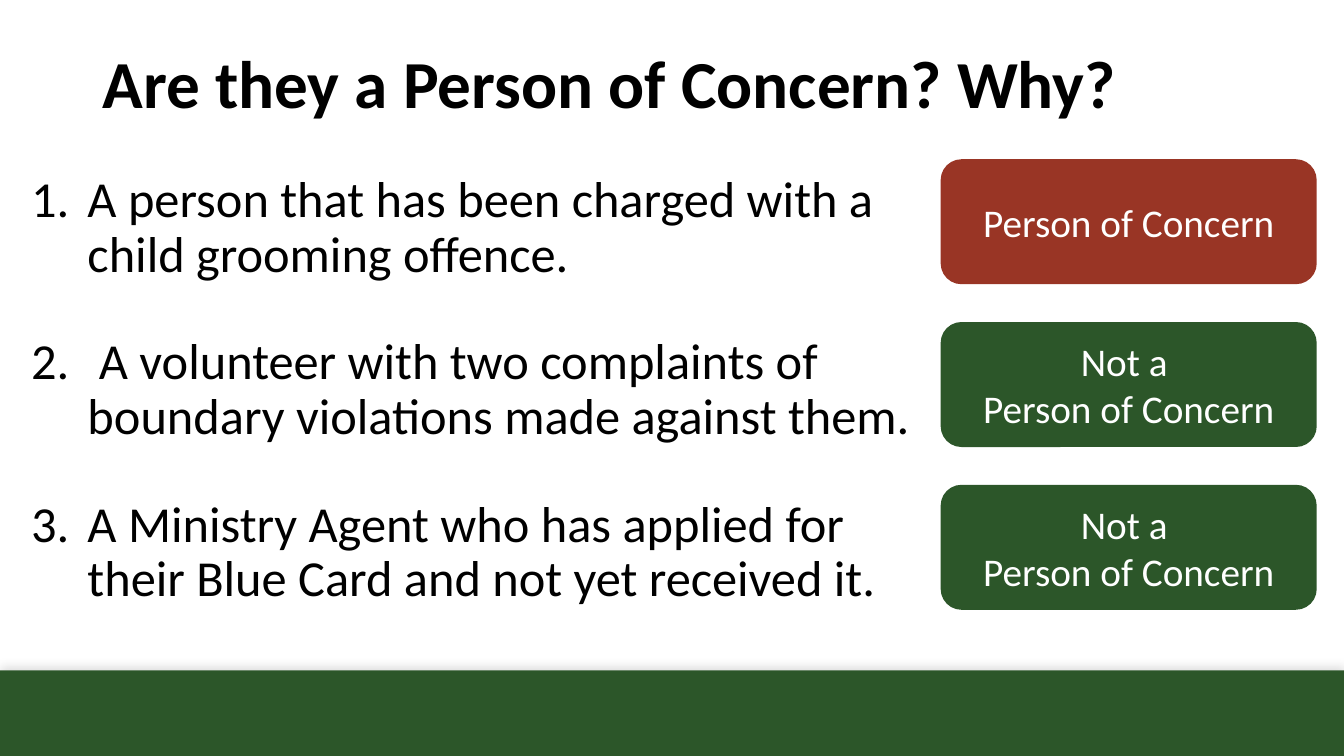
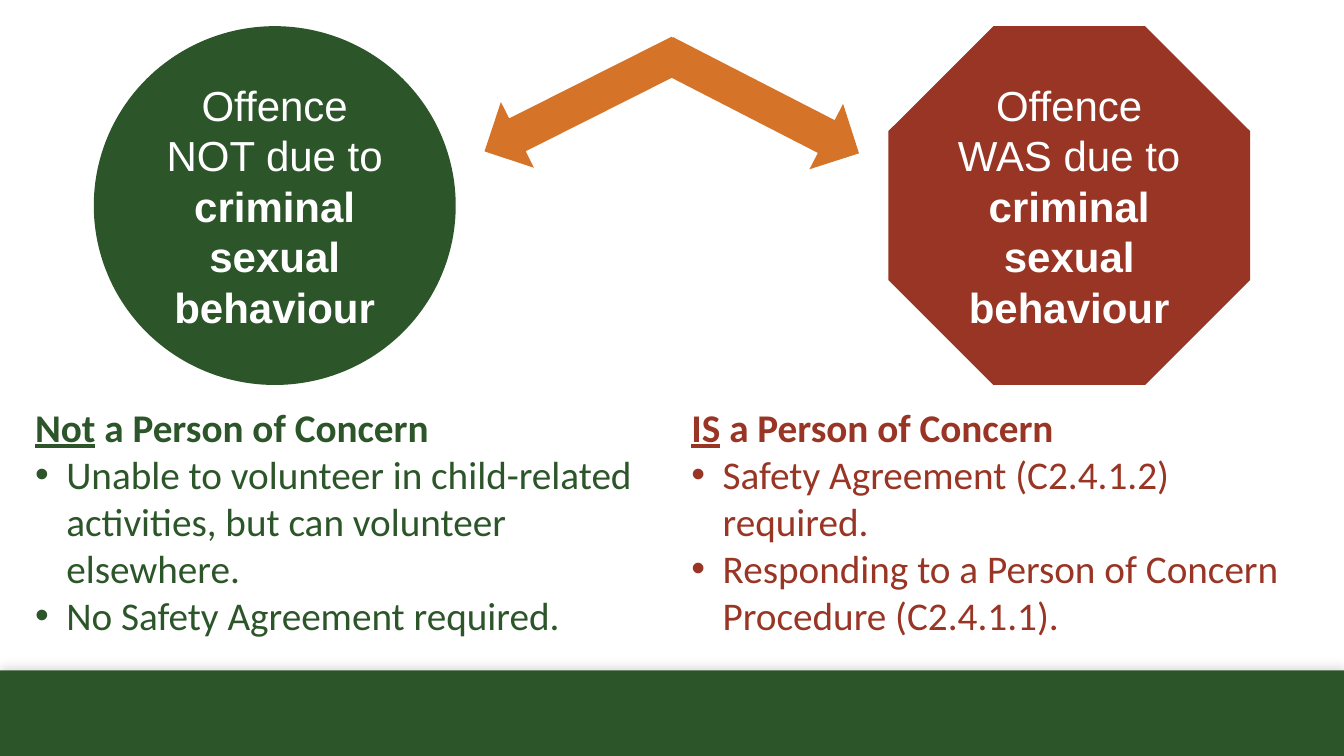
from lxml import etree
from pptx import Presentation
from pptx.dml.color import RGBColor
from pptx.enum.shapes import MSO_SHAPE
from pptx.enum.text import MSO_ANCHOR, PP_ALIGN
from pptx.oxml.ns import qn
from pptx.util import Inches, Pt

RECT, ROUND = MSO_SHAPE.RECTANGLE, MSO_SHAPE.ROUNDED_RECTANGLE
ROUNDEL, OCTAGON = MSO_SHAPE.FLOWCHART_CONNECTOR, MSO_SHAPE.OCTAGON
ARROW = MSO_SHAPE.LEFT_ARROW
MIDDLE, TOP = MSO_ANCHOR.MIDDLE, MSO_ANCHOR.TOP
LEFT, CENTER = PP_ALIGN.LEFT, PP_ALIGN.CENTER

COLORS = {
    "green": "2C5629",
    "red": "993525",
    "orange": "D57428",
    "white": "FFFFFF",
    "black": "000000",
}
WIDTH, HEIGHT = 13.33, 7.5
BULLET = ("buChar", {"char": "•"})
NUMBER = ("buAutoNum", {"type": "arabicPeriod"})


def rgb(name):
    return RGBColor.from_string(COLORS[name])


def add_shape(slide, kind, box, color, turn=0):
    shape = slide.shapes.add_shape(kind, *map(Inches, box))
    shape.shadow.inherit = False
    shape.fill.solid()
    shape.fill.fore_color.rgb = rgb(color)
    shape.line.fill.background()
    shape.rotation = turn
    shape.text_frame.vertical_anchor = MIDDLE
    return shape


def add_box(slide, box, anchor=TOP):
    """Add a wrapping text box and return its text frame."""
    frame = slide.shapes.add_textbox(*map(Inches, box)).text_frame
    frame.word_wrap = True
    frame.vertical_anchor = anchor
    return frame


def put(frame, *runs, size=28, color="white", font="Calibri", align=LEFT,
        mark=None, indent=0, gap=0, line=1.0):
    """Add a paragraph; a run is a text or a (text, "bold underline") pair."""
    para = frame.paragraphs[0]
    if para.runs:
        para = frame.add_paragraph()
        para.space_before = Pt(gap)
    para.alignment = align
    para.line_spacing = line
    if mark:
        tag, attrs = mark
        props = para._p.get_or_add_pPr()
        props.set("marL", str(Inches(indent)))
        props.set("indent", str(-Inches(indent)))
        etree.SubElement(props, qn("a:buFont"), typeface="Arial"
                         if mark is BULLET else font)
        etree.SubElement(props, qn("a:" + tag), attrs)
    for item in runs:
        text, style = (item, "") if isinstance(item, str) else item
        run = para.add_run()
        run.text = text
        run.font.name = font
        run.font.size = Pt(size)
        run.font.color.rgb = rgb(color)
        run.font.bold = "bold" in style
        run.font.underline = "underline" in style


def add_band(slide, layout):
    """Draw the bottom band and move it to the layout that all slides share."""
    top = 6.65
    band = add_shape(slide, RECT, (0, top, WIDTH, HEIGHT - top), "green")
    effects = band.element.spPr.find(qn("a:effectLst"))
    shadow = etree.SubElement(effects, qn("a:outerShdw"), blurRad=str(Pt(7)),
                              dist=str(Pt(3)), dir=str(270 * 60000))
    tint = etree.SubElement(shadow, qn("a:srgbClr"), val=COLORS["black"])
    etree.SubElement(tint, qn("a:alpha"), val="13000")
    layout.shapes.element.append(band.element)


def add_cases(slide):
    title = add_box(slide, (0.92, 0.15, 11.5, 1.43), MIDDLE)
    put(title, ("Are they a Person of Concern? Why?", "bold"),
        size=48, color="black", line=0.9)

    cases = [
        ("A person that has been charged with a child grooming offence.",
         "red", ["Person of Concern"]),
        (" A volunteer with two complaints of boundary violations made "
         "against them.", "green", ["Not a ", "Person of Concern"]),
        ("A Ministry Agent who has applied for their Blue Card and not yet "
         "received it.", "green", ["Not a ", "Person of Concern"]),
    ]
    body = add_box(slide, (0.21, 1.68, 9, 4.9))
    for row, (case, color, answer) in enumerate(cases):
        put(body, case, size=36, color="black", mark=NUMBER, indent=0.56,
            gap=38, line=0.9)
        top = 1.58 + row * 1.615
        label = add_shape(slide, ROUND, (9.33, top, 3.73, 1.24), color)
        for text in answer:
            put(label.text_frame, text, align=CENTER)


def add_sign(slide, kind, left, color, text):
    sign = add_shape(slide, kind, (left, 0.26, 3.59, 3.56), color)
    put(sign.text_frame, text, ("criminal sexual behaviour", "bold"),
        size=30, font="Arial", align=CENTER)


def add_result(slide, left, color, word, points):
    frame = add_box(slide, (left, 3.95, 6.41, 2.6))
    put(frame, (word, "bold underline"), (" a Person of Concern", "bold"),
        color=color)
    for point in points:
        put(frame, point, color=color, mark=BULLET, indent=0.31)


def add_split(slide):
    for left, top, turn in ((4.69, 0.65, 333.3), (6.47, 0.66, 207.2)):
        add_shape(slide, ARROW, (left, top, 2.17, 0.73), "orange", turn)
    add_sign(slide, ROUNDEL, 0.93, "green", "Offence NOT due to ")
    add_sign(slide, OCTAGON, 8.81, "red", "Offence WAS due to ")
    add_result(slide, 0.25, "green", "Not", [
        "Unable to volunteer in child-related activities, but can volunteer "
        "elsewhere.",
        "No Safety Agreement required.",
    ])
    add_result(slide, 6.76, "red", "IS", [
        "Safety Agreement (C2.4.1.2) required.",
        "Responding to a Person of Concern Procedure (C2.4.1.1).",
    ])


def main():
    prs = Presentation()
    prs.slide_width, prs.slide_height = Inches(WIDTH), Inches(HEIGHT)
    blank = prs.slide_layouts[6]
    first, second = [prs.slides.add_slide(blank) for _ in range(2)]
    add_band(first, blank)
    add_cases(first)
    add_split(second)
    prs.save("out.pptx")


if __name__ == "__main__":
    main()
